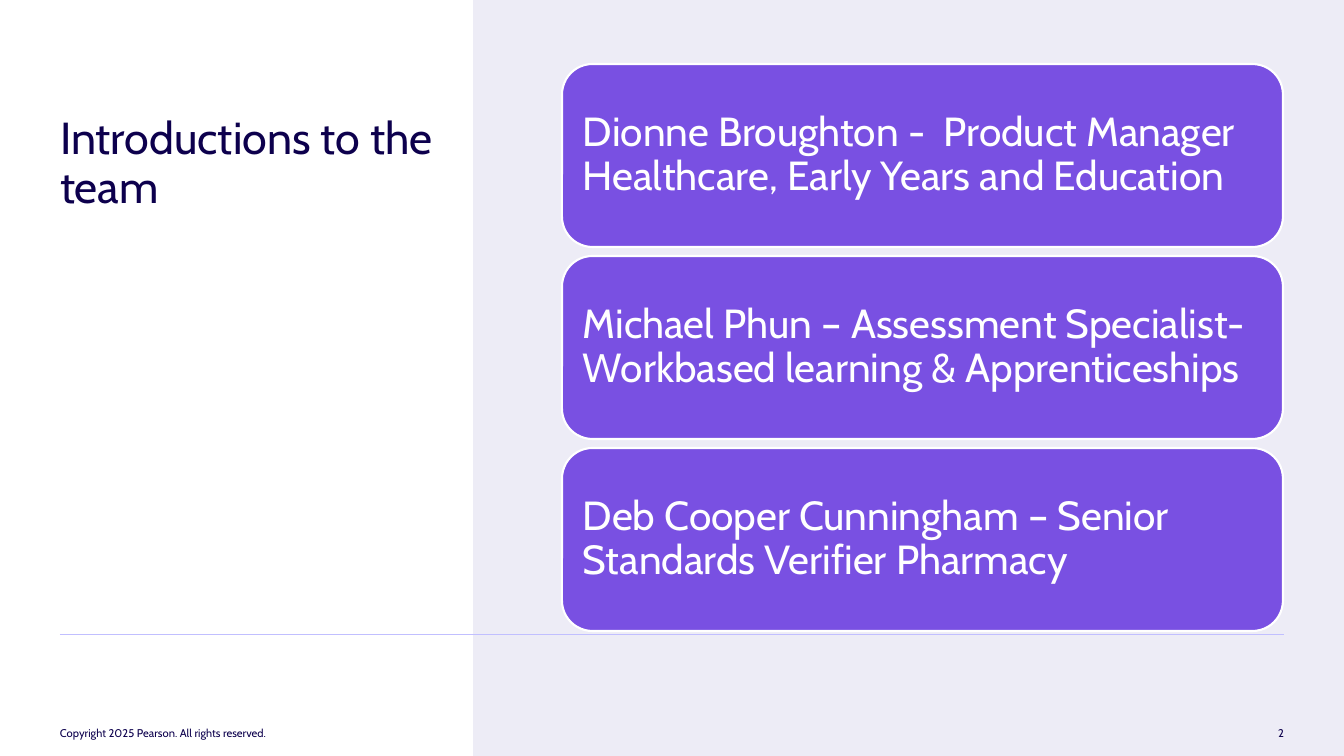
from dataclasses import dataclass

from pptx import Presentation
from pptx import util as u
from pptx.dml.color import RGBColor
from pptx.enum import shapes, text
from pptx.oxml.ns import qn
from lxml import etree


@dataclass(frozen=True)
class Theme:
    font: str = "Cabin"
    ink: str = "0D004D"
    white: str = "FFFFFF"
    backdrop: str = "EDECF6"
    card: str = "7950E2"
    rule: str = "C1BFFF"
    title_size: int = 32
    card_size: int = 29
    footer_size: int = 8


theme = Theme()
EMU_PER_PX = 914400 / 100.8


def px(length):
    return u.Emu(round(length * EMU_PER_PX))


def write(frame, content, size, color, inset=0, spacing=1.0,
          anchor=text.MSO_ANCHOR.MIDDLE, align=text.PP_ALIGN.LEFT):
    frame_format = {"word_wrap": True, "auto_size": text.MSO_AUTO_SIZE.NONE,
                    "vertical_anchor": anchor}
    for side in ("left", "top", "right", "bottom"):
        frame_format[f"margin_{side}"] = px(inset)
    for name, value in frame_format.items():
        setattr(frame, name, value)
    para = frame.paragraphs[0]
    para.alignment = align
    para.line_spacing = spacing
    span = para.add_run()
    span.text = content
    span.font.name = theme.font
    span.font.size = u.Pt(size)
    span.font.color.rgb = RGBColor.from_string(color)


deck = Presentation()
deck.slide_width, deck.slide_height = px(1344), px(756)
page = deck.slides.add_slide(deck.slide_layouts[5])

# Backdrop
page.background.fill.solid()
page.background.fill.fore_color.rgb = RGBColor.from_string(theme.backdrop)

# Title
title = page.shapes.title
for name, value in {"left": 60, "top": 116, "width": 397, "height": 200}.items():
    setattr(title, name, px(value))
write(title.text_frame, "Introductions to the team", theme.title_size, theme.ink,
      spacing=0.9, anchor=text.MSO_ANCHOR.TOP)

# White left panel, behind the title
panel = page.shapes.add_shape(shapes.MSO_SHAPE.RECTANGLE, 0, 0, px(473), px(756))
panel.shadow.inherit = False
panel.fill.solid()
panel.fill.fore_color.rgb = RGBColor.from_string(theme.white)
panel.line.fill.background()
title.element.addprevious(panel.element)

# Rule above the footer
rule = page.shapes.add_connector(shapes.MSO_CONNECTOR.STRAIGHT,
                                 px(60), px(635), px(1284), px(635))
rule.line.color.rgb = RGBColor.from_string(theme.rule)
rule.line.width = u.Pt(0.75)
etree.SubElement(rule.element.spPr, qn("a:effectLst"))

# Footer and page number
footers = [
    ("Copyright 2025 Pearson. All rights reserved.", 60, 397, text.PP_ALIGN.LEFT),
    ("2", 1093, 191, text.PP_ALIGN.RIGHT),
]
for content, left, width, align in footers:
    box = page.shapes.add_textbox(px(left), px(710), px(width), px(46))
    write(box.text_frame, content, theme.footer_size, theme.ink, align=align)

# Team cards
team = [
    "Dionne Broughton -  Product Manager  Healthcare, Early Years and Education",
    "Michael Phun – Assessment Specialist- Workbased learning & Apprenticeships",
    "Deb Cooper Cunningham – Senior Standards Verifier Pharmacy",
]
CARD_TOP, CARD_HEIGHT, CARD_GAP = 64, 183, 9
for index, member in enumerate(team):
    top = CARD_TOP + index * (CARD_HEIGHT + CARD_GAP)
    card = page.shapes.add_shape(shapes.MSO_SHAPE.ROUNDED_RECTANGLE,
                                 px(562), px(top), px(721), px(CARD_HEIGHT))
    card.shadow.inherit = False
    card.fill.solid()
    card.fill.fore_color.rgb = RGBColor.from_string(theme.card)
    card.line.color.rgb = RGBColor.from_string(theme.white)
    card.line.width = u.Pt(1.5)
    write(card.text_frame, member, theme.card_size, theme.white,
          inset=12, spacing=0.9)

deck.save("out.pptx")
